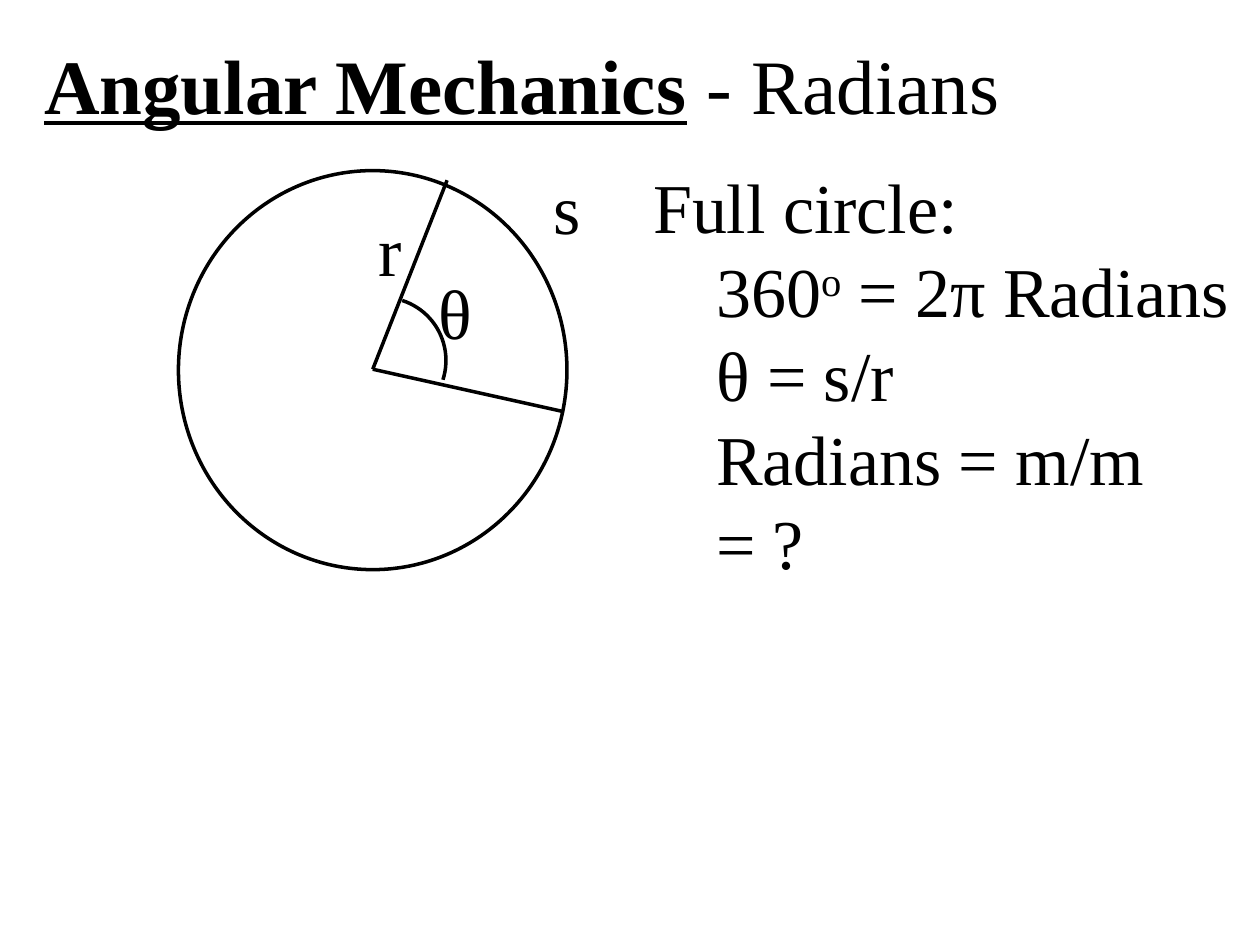
"""Builds the Angular Mechanics slide that introduces radians."""
import dataclasses

import lxml.etree
import pptx
import pptx.dml.color
import pptx.enum.shapes
import pptx.enum.text
import pptx.oxml.ns
import pptx.util

Pt = pptx.util.Pt
qn = pptx.oxml.ns.qn


@dataclasses.dataclass(frozen=True)
class Theme:
    """Colours, typeface, type sizes and line weight."""
    ink: str = "000000"
    paper: str = "FFFFFF"
    typeface: str = "Times New Roman"
    title_size: int = 44
    text_size: int = 40
    stroke: int = 2


@dataclasses.dataclass
class SlideWriter:
    """Draws styled elements on the current slide."""
    theme: Theme
    slide: object

    def color(self, value):
        """Turn a hex value into a colour."""
        return pptx.dml.color.RGBColor.from_string(value)

    def run(self, paragraph, text, size, baseline=None, **extra):
        """Add one formatted run to a paragraph."""
        run = paragraph.add_run()
        run.text = text
        formats = {"name": self.theme.typeface, "size": Pt(size), "bold": False, **extra}
        for attribute, value in formats.items():
            setattr(run.font, attribute, value)
        run.font.color.rgb = self.color(self.theme.ink)
        if baseline:
            run.font._element.set("baseline", str(baseline))

    def frame(self, shape, wrap):
        """Give a text shape the common frame settings."""
        formats = {
            "word_wrap": wrap,
            "auto_size": pptx.enum.text.MSO_AUTO_SIZE.NONE,
            "vertical_anchor": pptx.enum.text.MSO_ANCHOR.TOP,
        }
        for attribute, value in formats.items():
            setattr(shape.text_frame, attribute, value)
        return shape.text_frame

    def place(self, shape, box):
        """Move and size a placeholder."""
        for attribute, value in zip(("left", "top", "width", "height"), box):
            setattr(shape, attribute, Pt(value))

    def title(self, box, topic, subject):
        """Fill the title with an underlined topic and a plain subject."""
        shape = self.slide.shapes.title
        self.place(shape, box)
        heading = self.frame(shape, True).paragraphs[0]
        heading.alignment = pptx.enum.text.PP_ALIGN.LEFT
        self.run(heading, topic, self.theme.title_size, bold=True, underline=True)
        self.run(heading, subject, self.theme.title_size)

    def body(self, box, lines):
        """Fill the body with (indent, runs) lines without bullets."""
        shape = self.slide.placeholders[1]
        self.place(shape, box)
        frame = self.frame(shape, True)
        for index, (indent, runs) in enumerate(lines):
            line = frame.add_paragraph() if index else frame.paragraphs[0]
            line.level = 1 if indent else 0
            line.space_before = Pt(0)
            properties = line._p.get_or_add_pPr()
            properties.set("marL", str(Pt(indent)))
            properties.set("indent", "0")
            lxml.etree.SubElement(properties, qn("a:buNone"))
            for text, baseline in runs:
                self.run(line, text, self.theme.text_size, baseline)

    def label(self, box, text):
        """Add a short symbol beside the diagram."""
        shape = self.slide.shapes.add_textbox(*map(Pt, box))
        symbol = self.frame(shape, False).paragraphs[0]
        self.run(symbol, text, self.theme.text_size)

    def outline(self, kind, box, rotation=0, filled=False):
        """Add an outlined preset shape."""
        shape = self.slide.shapes.add_shape(kind, *map(Pt, box))
        shape.shadow.inherit = False
        shape.rotation = rotation
        if filled:
            shape.fill.solid()
            shape.fill.fore_color.rgb = self.color(self.theme.paper)
        else:
            shape.fill.background()
        self.stroke(shape)

    def line(self, start, end):
        """Add a straight line between two points."""
        straight = pptx.enum.shapes.MSO_CONNECTOR.STRAIGHT
        connector = self.slide.shapes.add_connector(straight, *map(Pt, (*start, *end)))
        self.stroke(connector)
        lxml.etree.SubElement(connector._element.spPr, qn("a:effectLst"))

    def stroke(self, shape):
        """Apply the common line style."""
        shape.line.color.rgb = self.color(self.theme.ink)
        shape.line.width = Pt(self.theme.stroke)


def main():
    """Build and save the slide."""
    deck = pptx.Presentation()
    deck.slide_width, deck.slide_height = Pt(720), Pt(540)
    writer = SlideWriter(Theme(), deck.slides.add_slide(deck.slide_layouts[1]))
    shapes = pptx.enum.shapes.MSO_SHAPE

    writer.title((18, 18, 565, 60.5), "Angular Mechanics", " - Radians")
    writer.body((366, 90, 350.5, 250), [
        (0, [("Full circle:", None)]),
        (36, [("360", None), ("o", 30000), (" = 2π Radians", None)]),
        (36, [("θ = s/r", None)]),
        (36, [("Radians = m/m = ?", None)]),
    ])

    writer.outline(shapes.OVAL, (102, 97.5, 222, 228), filled=True)
    center = (213, 211)
    for rim in ((255.5, 103), (321, 235)):
        writer.line(center, rim)

    angle_x, angle_y, angle_radius = 218.9, 206, 36
    writer.outline(shapes.ARC, (angle_x - angle_radius, angle_y - angle_radius,
                                2 * angle_radius, 2 * angle_radius), rotation=17.8)

    for symbol, left, top, width in (("r", 209.5, 114.5, 28),
                                     ("θ", 243.5, 150.5, 35),
                                     ("s", 309.5, 90.5, 30)):
        writer.label((left, top, width, 55.5), symbol)

    deck.save("out.pptx")


if __name__ == "__main__":
    main()
